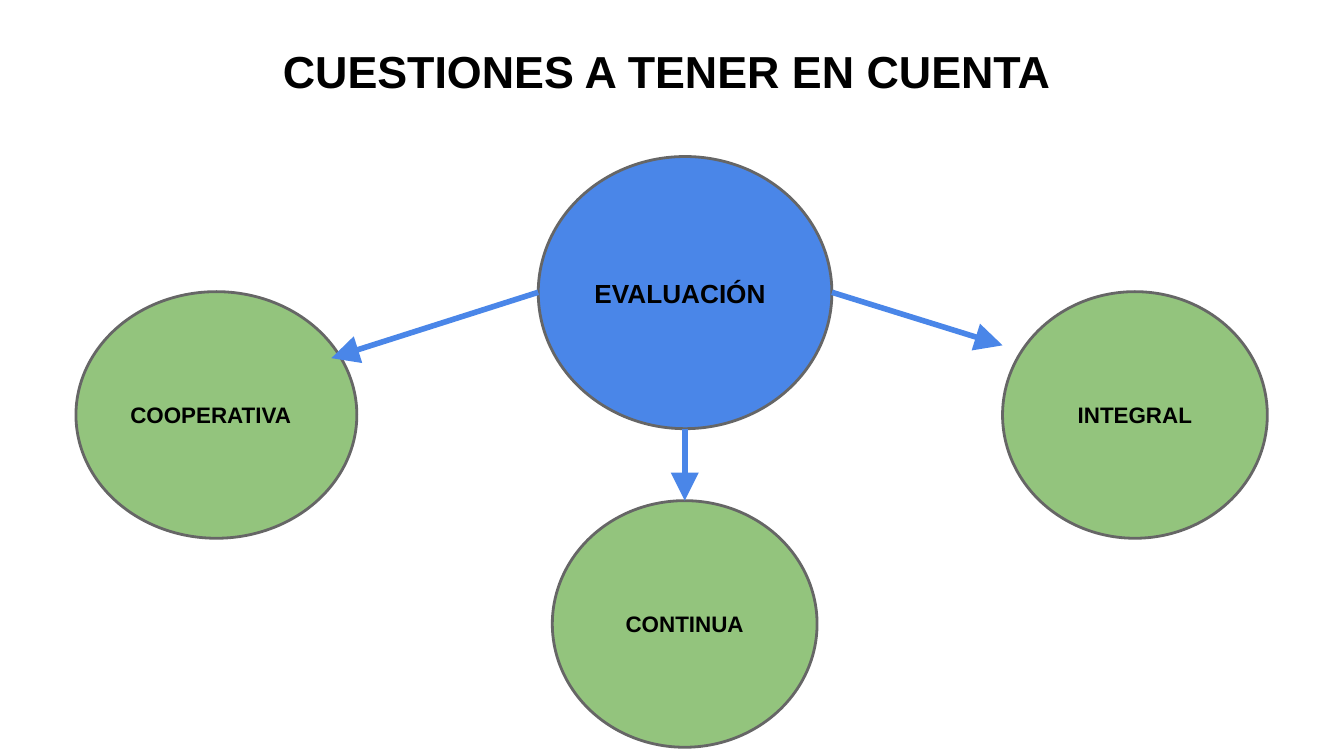
from dataclasses import dataclass

import pptx
import pptx.dml.color
import pptx.enum.shapes
import pptx.enum.text
import pptx.oxml
import pptx.oxml.ns
import pptx.util

EMU_PER_PX = 4572  # 200 px to the inch
FONT = "Arial"
COLORS = {
    "text": "000000",
    "center": "4A86E8",
    "topic": "93C47D",
    "outline": "666666",
    "arrow": "4A86E8",
}
LEFT = pptx.enum.text.PP_ALIGN.LEFT
CENTER = pptx.enum.text.PP_ALIGN.CENTER
MIDDLE = pptx.enum.text.MSO_ANCHOR.MIDDLE
BOTTOM = pptx.enum.text.MSO_ANCHOR.BOTTOM


@dataclass(frozen=True)
class Bubble:
    text: str
    left: int
    top: int
    width: int
    height: int
    color: str
    size: int
    alignment: pptx.enum.text.PP_ALIGN = CENTER


@dataclass(frozen=True)
class Arrow:
    start: tuple[int, int]
    end: tuple[int, int]


EVALUATION = Bubble("EVALUACIÓN", 801, 233, 437, 405, "center", 14, LEFT)
COOPERATIVE = Bubble("COOPERATIVA", 113, 434, 418, 367, "topic", 12, LEFT)
CONTINUOUS = Bubble("CONTINUA", 822, 745, 394, 367, "topic", 12)
INTEGRAL = Bubble("INTEGRAL", 1492, 434, 394, 367, "topic", 12)
BUBBLES = [EVALUATION, COOPERATIVE, CONTINUOUS, INTEGRAL]

CENTER_X = EVALUATION.left + EVALUATION.width // 2
CENTER_Y = EVALUATION.top + EVALUATION.height // 2
ARROWS = [
    Arrow((EVALUATION.left, CENTER_Y), (493, 533)),
    Arrow((EVALUATION.left + EVALUATION.width, CENTER_Y), (INTEGRAL.left, 514)),
    Arrow((CENTER_X, EVALUATION.top + EVALUATION.height), (CENTER_X, CONTINUOUS.top)),
]


def px(*lengths: int) -> list[pptx.util.Emu]:
    return [pptx.util.Emu(length * EMU_PER_PX) for length in lengths]


def rgb(name: str) -> pptx.dml.color.RGBColor:
    return pptx.dml.color.RGBColor.from_string(COLORS[name])


def write_text(shape, text: str, size: int, alignment, anchor) -> None:
    frame = shape.text_frame
    frame.word_wrap = True
    frame.vertical_anchor = anchor
    (inset,) = px(20)
    frame.margin_left = frame.margin_right = inset
    frame.margin_top = frame.margin_bottom = inset
    paragraph = frame.paragraphs[0]
    paragraph.alignment = alignment
    run = paragraph.add_run()
    run.text = text
    run.font.name = FONT
    run.font.size = pptx.util.Pt(size)
    run.font.bold = True
    run.font.color.rgb = rgb("text")


def draw_bubble(slide, bubble: Bubble) -> None:
    shape = slide.shapes.add_shape(
        pptx.enum.shapes.MSO_SHAPE.OVAL,
        *px(bubble.left, bubble.top, bubble.width, bubble.height),
    )
    shape.shadow.inherit = False
    shape.fill.solid()
    shape.fill.fore_color.rgb = rgb(bubble.color)
    shape.line.color.rgb = rgb("outline")
    shape.line.width = pptx.util.Pt(1.5)
    write_text(shape, bubble.text, bubble.size, bubble.alignment, MIDDLE)


def draw_arrow(slide, arrow: Arrow) -> None:
    connector = slide.shapes.add_connector(
        pptx.enum.shapes.MSO_CONNECTOR.STRAIGHT, *px(*arrow.start, *arrow.end)
    )
    connector.line.color.rgb = rgb("arrow")
    connector.line.width = pptx.util.Pt(3)
    namespace = pptx.oxml.ns.nsdecls("a")
    properties = connector._element.spPr
    properties.find(pptx.oxml.ns.qn("a:ln")).append(
        pptx.oxml.parse_xml(
            f'<a:tailEnd {namespace} type="triangle" w="lg" len="lg"/>'
        )
    )
    properties.append(pptx.oxml.parse_xml(f"<a:effectLst {namespace}/>"))


def main() -> None:
    presentation = pptx.Presentation()
    presentation.slide_width, presentation.slide_height = px(2000, 1125)
    slide = presentation.slides.add_slide(presentation.slide_layouts[6])

    title = slide.shapes.add_textbox(*px(100, 57, 1800, 108))
    write_text(title, "CUESTIONES A TENER EN CUENTA ", 24, CENTER, BOTTOM)
    for bubble in BUBBLES:
        draw_bubble(slide, bubble)
    for arrow in ARROWS:
        draw_arrow(slide, arrow)

    presentation.save("out.pptx")


if __name__ == "__main__":
    main()
